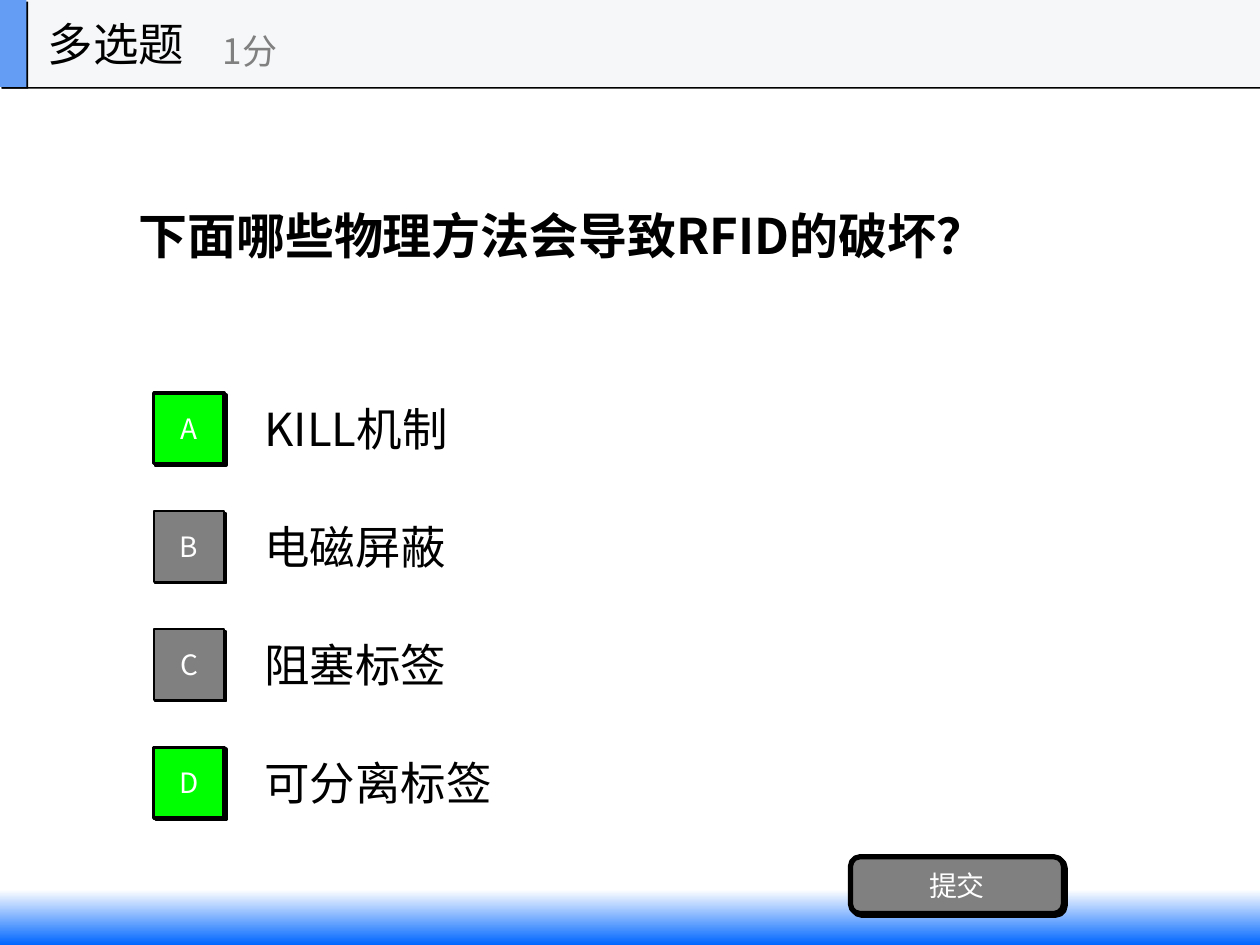
from lxml import etree
from pptx import Presentation
from pptx.dml.color import RGBColor
from pptx.enum.shapes import MSO_SHAPE
from pptx.enum.text import MSO_ANCHOR, PP_ALIGN
from pptx.oxml.ns import qn
from pptx.util import Inches, Pt

RECT, ROUNDED = MSO_SHAPE.RECTANGLE, MSO_SHAPE.ROUNDED_RECTANGLE
LEFT, CENTER = PP_ALIGN.LEFT, PP_ALIGN.CENTER
MIDDLE = MSO_ANCHOR.MIDDLE

WIDTH, HEIGHT = 10, 7.5
COLUMN = WIDTH / 10
ROW = HEIGHT / 8
HEADER = 0.69
ANSWER_CENTER = 3.4
FONT = "Noto Sans CJK SC"
COLORS = {
    "text": "000000", "white": "FFFFFF", "muted": "808080",
    "correct": "00FF00", "header": "F6F7F8", "accent": "639EF4",
    "footer": "0066FF", "outline": "000000",
}
ANSWERS = [
    ("A", "KILL机制", True),
    ("B", "电磁屏蔽", False),
    ("C", "阻塞标签", False),
    ("D", "可分离标签", True),
]


def rgb(name):
    """Return the named colour."""
    return RGBColor.from_string(COLORS[name])


def write(holder, words, size, color="text", align=LEFT, bold=False, inset=0.1):
    """Write one vertically centred line of text into a shape."""
    frame = holder.text_frame
    frame_format = {
        "word_wrap": True, "vertical_anchor": MIDDLE,
        "margin_left": Inches(inset), "margin_right": Inches(inset),
        "margin_top": Inches(inset / 2), "margin_bottom": Inches(inset / 2),
    }
    for key, value in frame_format.items():
        setattr(frame, key, value)
    line = frame.paragraphs[0]
    line.alignment = align
    run = line.add_run()
    run.text = words
    run.font.color.rgb = rgb(color)
    for key, value in {"size": Pt(size), "bold": bold, "name": FONT}.items():
        setattr(run.font, key, value)
    east_asian = etree.SubElement(run.font._element, qn("a:ea"))
    east_asian.set("typeface", FONT)


def add_label(shapes, box, words, size, **style):
    """Add a text box."""
    label = shapes.add_textbox(*map(Inches, box))
    write(label, words, size, **style)


def add_hard_shadow(panel):
    """Give a shape a sharp shadow to its lower right."""
    panel.shadow.inherit = False
    effects = panel._element.spPr.find(qn("a:effectLst"))
    settings = {"blurRad": "0", "dist": str(Pt(1.4)), "dir": "2700000",
                "algn": "ctr", "rotWithShape": "0"}
    shadow = etree.SubElement(effects, qn("a:outerShdw"), settings)
    etree.SubElement(shadow, qn("a:srgbClr"), val=COLORS["outline"])


def add_panel(shapes, box, fill, outline=0, kind=RECT):
    """Add a filled panel with a hard shadow and an optional outline."""
    panel = shapes.add_shape(kind, *map(Inches, box))
    panel.fill.solid()
    panel.fill.fore_color.rgb = rgb(fill)
    if outline:
        panel.line.color.rgb = rgb("outline")
        panel.line.width = Pt(outline)
    else:
        panel.line.fill.background()
    add_hard_shadow(panel)
    return panel


def add_footer(shapes, depth=0.44):
    """Add the band that fades from white to blue."""
    band = shapes.add_shape(
        RECT, *map(Inches, (0, HEIGHT - depth, WIDTH, depth)))
    band.shadow.inherit = False
    band.line.fill.background()
    band.fill.gradient()
    band.fill.gradient_angle = 270
    for stop, name in zip(band.fill.gradient_stops, ("white", "footer")):
        stop.color.rgb = rgb(name)


def add_answer(shapes, row, letter, words, correct):
    """Add one lettered answer on its row."""
    middle = ANSWER_CENTER + row * ROW
    label_height, badge_size = 0.7, 0.56
    add_label(shapes, (2 * COLUMN, middle - label_height / 2,
                       7 * COLUMN, label_height), words, 26)
    fill, outline = ("correct", 2) if correct else ("muted", 1)
    badge = add_panel(shapes, (1.22, middle - badge_size / 2,
                               badge_size, badge_size), fill, outline)
    write(badge, letter, 16, color="white", align=CENTER, inset=0)


def add_header(shapes):
    """Add the grouped header with question type and score."""
    header = shapes.add_group_shape().shapes
    add_panel(header, (0, 0, WIDTH, HEADER), "header")
    add_panel(header, (0, 0, 0.21, HEADER), "accent")
    add_label(header, (0.28, 0, 2.08, HEADER), "多选题", 26)
    add_label(header, (1.67, 0.12, 2.5, 0.56), "1分", 20, color="muted")


def main():
    """Build the quiz slide and save it."""
    deck = Presentation()
    deck.slide_width, deck.slide_height = Inches(WIDTH), Inches(HEIGHT)
    shapes = deck.slides.add_slide(deck.slide_layouts[6]).shapes
    add_footer(shapes)
    add_label(shapes, (COLUMN, HEADER, 8 * COLUMN, 2.5 * ROW),
              "下面哪些物理方法会导致RFID的破坏？", 28, bold=True)
    for row, answer in enumerate(ANSWERS):
        add_answer(shapes, row, *answer)
    submit = add_panel(shapes, (6.75, 6.8, 1.69, 0.45), "muted", 3, ROUNDED)
    write(submit, "提交", 16, color="white", align=CENTER, inset=0)
    add_header(shapes)
    deck.save("out.pptx")


if __name__ == "__main__":
    main()
